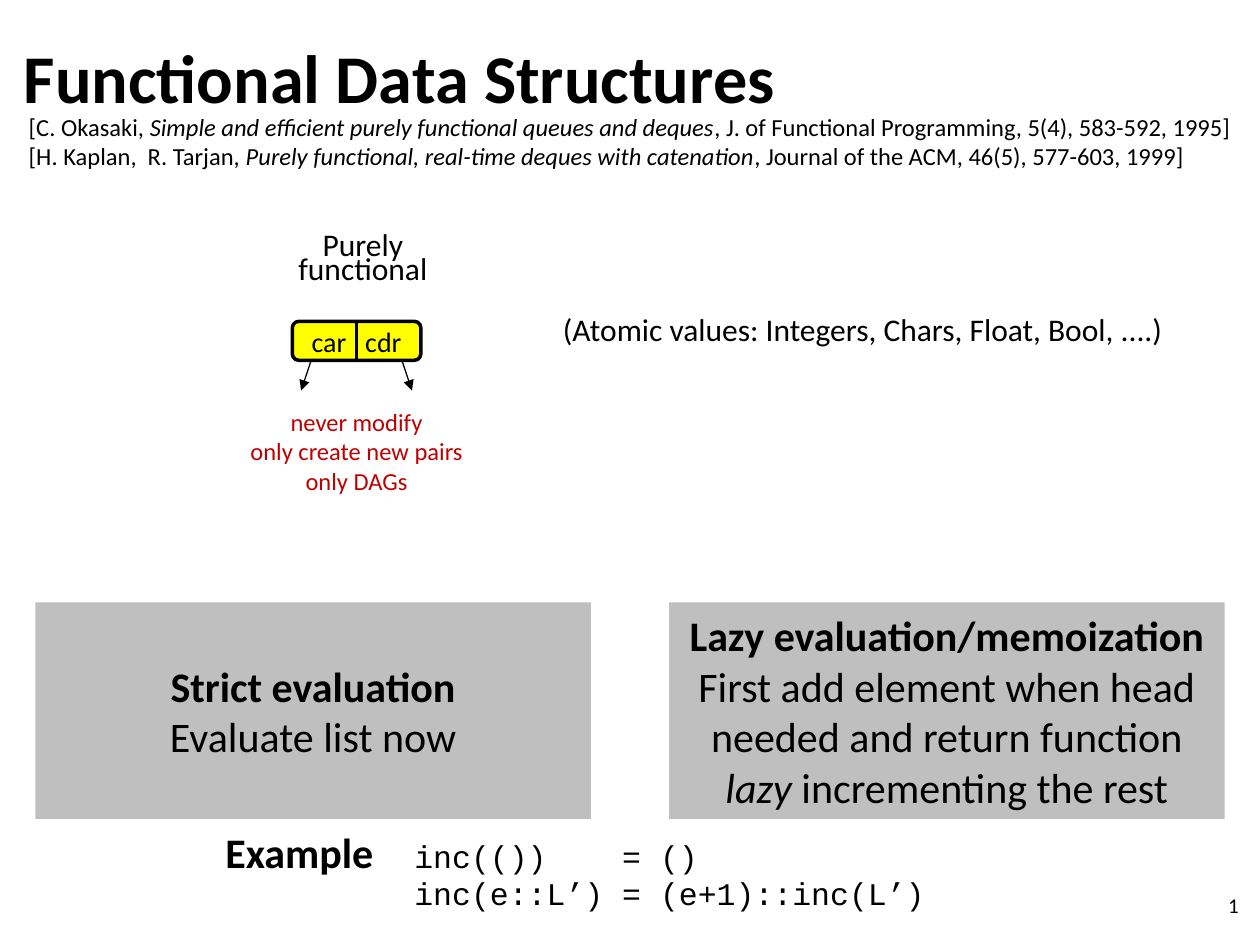
from pptx import Presentation
from pptx.dml.color import RGBColor
from pptx.enum.shapes import MSO_CONNECTOR as Connector, MSO_SHAPE as Shape
from pptx.enum.text import MSO_ANCHOR as Anchor, PP_ALIGN as Align
from pptx.oxml.ns import qn
from pptx.util import Inches, Pt
from lxml.etree import SubElement

BLACK, RED, YELLOW, GREY = "000000", "C00000", "FFFF00", "BFBFBF"
TITLE = "Functional Data Structures"
# Within a paragraph, * switches italics and a leading ! makes it bold.
REFERENCES = [
    "[C. Okasaki, *Simple and efficient purely functional queues and deques*"
    ", J. of Functional Programming, 5(4), 583-592, 1995]",
    "[H. Kaplan,  R. Tarjan, *Purely functional, real-time deques with catenation*"
    ", Journal of the ACM, 46(5), 577-603, 1999]",
]
RULES = ["never modify", "only create new pairs", "only DAGs"]
ATOMS = ["(Atomic values: Integers, Chars, Float, Bool, ....)"]
CODE = ["inc(())    = ()", "inc(e::L’) = (e+1)::inc(L’)"]
EVALUATIONS = [
    ["!Strict evaluation", "Evaluate list now"],
    ["!Lazy evaluation/memoization",
     "First add element when head needed and return function "
     "*lazy *incrementing the rest"],
]
TEXTS = [
    (["Purely functional"], (2.17, 1.84, 1.42, 0.51),
     dict(size=18, align=Align.CENTER, spacing=Pt(14))),
    (RULES, (1.69, 3.18, 2.28, 0.81), dict(size=14, align=Align.CENTER, color=RED)),
    (REFERENCES, (0.13, 0.84, 9.8, 1.07), dict(size=14)),
    (ATOMS, (4.37, 2.41, 5.2, 0.4), dict(size=18)),
    (CODE, (3.19, 6.59, 5.83, 0.71), dict(size=18, font="Courier New")),
    (["!Example"], (1.69, 6.51, 1.65, 0.5), dict(size=24)),
    (["1"], (7.6, 6.98, 2.33, 0.4),
     dict(size=12, align=Align.RIGHT, anchor=Anchor.MIDDLE)),
]
PAIR = (2.32, 2.55, 1.02, 0.31)
MARGIN, PANEL_TOP, PANEL_WIDTH, PANEL_HEIGHT = 0.28, 4.78, 4.41, 1.72
SLIDE_WIDTH, SLIDE_HEIGHT = 10, 7.5


def rgb(code):
    """Turn a hex string into a colour."""
    return RGBColor.from_string(code)


def write(box, lines, size, font="Calibri", color=BLACK, align=Align.LEFT,
          anchor=Anchor.TOP, spacing=None):
    """Fill a shape with formatted paragraphs."""
    frame = box.text_frame
    frame.word_wrap = True
    frame.vertical_anchor = anchor
    for index, line in enumerate(lines):
        para = frame.add_paragraph() if index else frame.paragraphs[0]
        para.alignment = align
        if spacing:
            para.line_spacing = spacing
        para.font.name, para.font.size = font, Pt(size)
        para.font.color.rgb = rgb(color)
        para.font.bold = line.startswith("!")
        for part, words in enumerate(line.lstrip("!").split("*")):
            span = para.add_run()
            span.text = words
            if part % 2:
                span.font.italic = True


def add_block(page, kind, place, fill, lines, size, border=None):
    """Add a filled shape with centred text."""
    box = page.shapes.add_shape(kind, *map(Inches, place))
    box.shadow.inherit = False
    box.fill.solid()
    box.fill.fore_color.rgb = rgb(fill)
    if border:
        box.line.color.rgb, box.line.width = rgb(BLACK), Pt(border)
    else:
        box.line.fill.background()
    write(box, lines, size, align=Align.CENTER, anchor=Anchor.MIDDLE)


def add_line(page, start, end, width, arrow=False):
    """Draw a black line, with an arrowhead at its end if wanted."""
    line = page.shapes.add_connector(Connector.STRAIGHT, *map(Inches, start + end))
    line.line.color.rgb, line.line.width = rgb(BLACK), Pt(width)
    if arrow:
        SubElement(line.line._get_or_add_ln(), qn("a:tailEnd"), type="triangle")
    SubElement(line._element.spPr, qn("a:effectLst"))


def add_pair(page):
    """Draw the car/cdr cell with its divider and two pointers."""
    left, top, width, height = PAIR
    middle, bottom = left + width / 2, top + height
    add_block(page, Shape.ROUNDED_RECTANGLE, PAIR, YELLOW, ["car   cdr"], 16, border=2)
    add_line(page, (middle, bottom), (middle, top), 1.5)
    for side in (-1, 1):
        add_line(page, (middle + side * 0.36, bottom),
                 (middle + side * 0.44, bottom + 0.24), 0.75, arrow=True)


def main():
    """Build and save the slide."""
    deck = Presentation()
    deck.slide_width, deck.slide_height = Inches(SLIDE_WIDTH), Inches(SLIDE_HEIGHT)
    page = deck.slides.add_slide(deck.slide_layouts[5])
    title = page.shapes.title
    title.left, title.top, title.width, title.height = map(
        Inches, (0.09, 0.29, 9.91, 0.71))
    write(title, ["!" + TITLE], 39, anchor=Anchor.MIDDLE, spacing=0.9)
    add_pair(page)
    panel_lefts = (MARGIN, SLIDE_WIDTH - MARGIN - PANEL_WIDTH)
    for left, lines in zip(panel_lefts, EVALUATIONS):
        place = (left, PANEL_TOP, PANEL_WIDTH, PANEL_HEIGHT)
        add_block(page, Shape.RECTANGLE, place, GREY, lines, 24)
    for lines, place, style in TEXTS:
        write(page.shapes.add_textbox(*map(Inches, place)), lines, **style)
    deck.save("out.pptx")


if __name__ == "__main__":
    main()
